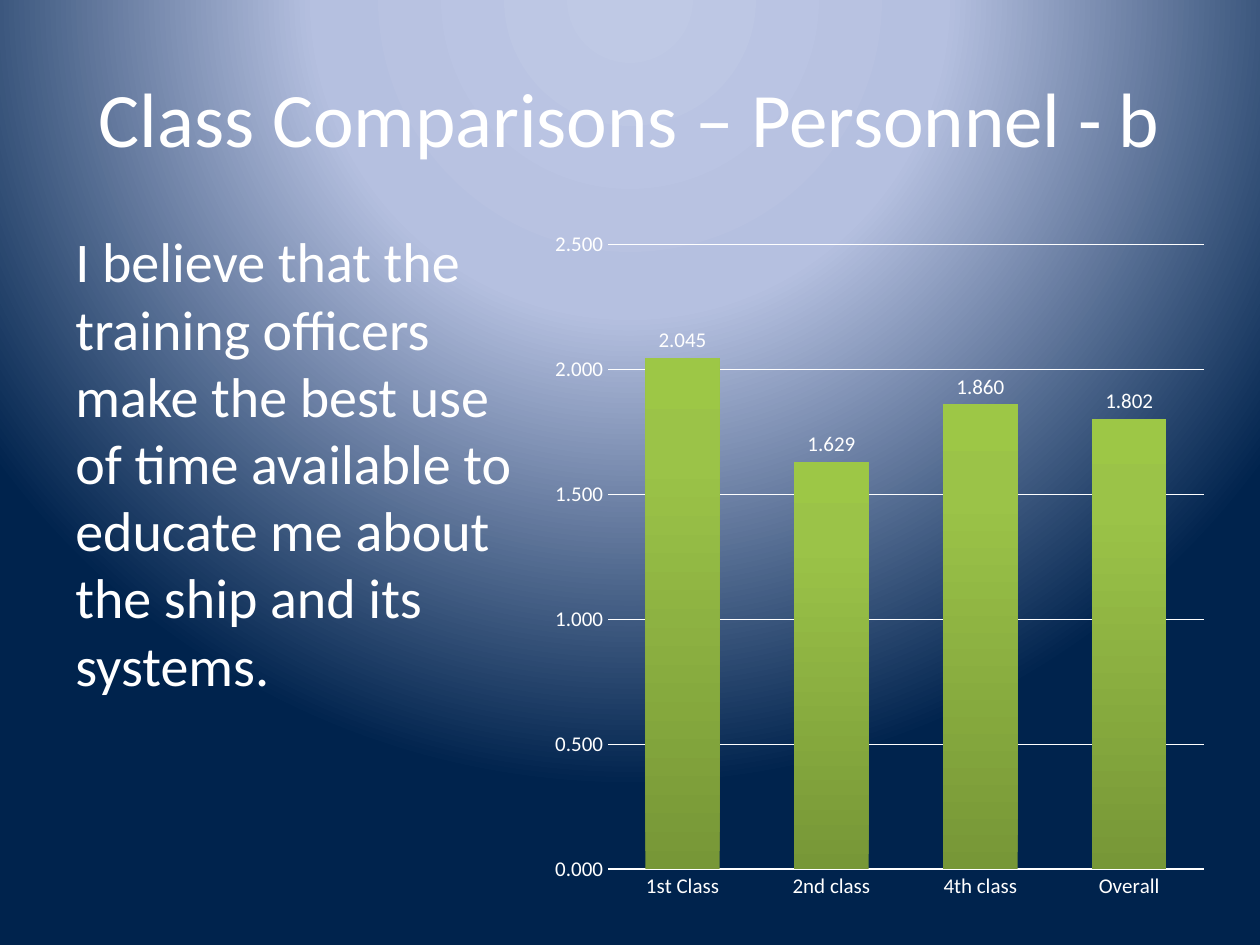
import pptx
import pptx.chart.data
import pptx.dml.color
import pptx.enum.chart
import pptx.enum.text
import pptx.oxml
import pptx.oxml.ns
import pptx.util
from pptx.util import Cm, Pt

COLORS = {
    "text": "FFFFFF",
    "glow": "BFC9E5",
    "haze": "B5C0E0",
    "navy": "00234D",
    "bar_dark": "779737",
    "bar_mid": "9BC348",
    "bar_light": "9DC746",
}
FONT = "Calibri"
WHITE = pptx.dml.color.RGBColor.from_string(COLORS["text"])


def set_gradient(parent, stops, direction):
    """Give the gradient fill below parent new stops and a new direction."""
    old = next(parent.iter(pptx.oxml.ns.qn("a:gradFill")))
    stop_list = "".join(
        f'<a:gs pos="{position * 1000}"><a:srgbClr val="{COLORS[name]}"/></a:gs>'
        for position, name in stops
    )
    new = pptx.oxml.parse_xml(
        f'<a:gradFill {pptx.oxml.ns.nsdecls("a")} rotWithShape="1">'
        f"<a:gsLst>{stop_list}</a:gsLst>{direction}</a:gradFill>"
    )
    old.getparent().replace(old, new)


def style_font(font, size):
    font.name = FONT
    font.size = Pt(size)
    font.color.rgb = WHITE


presentation = pptx.Presentation()
presentation.slide_width = Cm(25.4)
presentation.slide_height = Cm(19.05)
slide = presentation.slides.add_slide(presentation.slide_layouts[6])

# Background: glow centred above the top edge
slide.background.fill.gradient()
set_gradient(
    slide.background._cSld,
    [(0, "glow"), (40, "haze"), (100, "navy")],
    '<a:path path="circle">'
    '<a:fillToRect l="50000" t="-80000" r="50000" b="180000"/></a:path>',
)

# Title and statement
anchors = pptx.enum.text.MSO_ANCHOR
alignments = pptx.enum.text.PP_ALIGN
texts = [
    ("Class Comparisons – Personnel - b", 44, (1.27, 0.76, 22.86, 3.18),
     anchors.MIDDLE, alignments.CENTER),
    ("I believe that the training officers make the best use of time "
     "available to educate me about the ship and its systems.",
     32, (1.27, 4.45, 9.53, 12.57), anchors.TOP, alignments.LEFT),
]
for text, size, box, anchor, alignment in texts:
    shape = slide.shapes.add_textbox(*map(Cm, box))
    shape.text_frame.word_wrap = True
    shape.text_frame.vertical_anchor = anchor
    paragraph = shape.text_frame.paragraphs[0]
    paragraph.text = text
    paragraph.alignment = alignment
    style_font(paragraph.font, size)

# Column chart
chart_data = pptx.chart.data.CategoryChartData(number_format="0.000")
chart_data.categories = ["1st Class", "2nd class", "4th class", "Overall"]
chart_data.add_series("Series 1", (2.045, 1.629, 1.860, 1.802))
chart = slide.shapes.add_chart(
    pptx.enum.chart.XL_CHART_TYPE.COLUMN_CLUSTERED,
    Cm(10.36), Cm(4.45), Cm(14.61), Cm(13.97), chart_data,
).chart
chart.has_legend = False
chart.has_title = False
style_font(chart.font, 10)

# Axes
for axis in (chart.category_axis, chart.value_axis):
    axis.major_tick_mark = pptx.enum.chart.XL_TICK_MARK.NONE
    axis.minor_tick_mark = pptx.enum.chart.XL_TICK_MARK.NONE
    style_font(axis.tick_labels.font, 12)
category_line = chart.category_axis.format.line
category_line.color.rgb = WHITE
category_line.width = Pt(1)

value_axis = chart.value_axis
value_axis.minimum_scale = 0
value_axis.maximum_scale = 2.5
value_axis.major_unit = 0.5
value_axis.format.line.fill.background()
value_axis.tick_labels.number_format = "0.000"
value_axis.tick_labels.number_format_is_linked = False
grid_line = value_axis.major_gridlines.format.line
grid_line.color.rgb = WHITE
grid_line.width = Pt(0.75)

# Bars and their labels
plot = chart.plots[0]
plot.vary_by_categories = False
plot.gap_width = 100
plot.overlap = -24
series = plot.series[0]
series.format.fill.gradient()
set_gradient(
    series._element,
    [(0, "bar_dark"), (80, "bar_mid"), (100, "bar_light")],
    '<a:lin ang="16200000" scaled="0"/>',
)
labels = series.data_labels
labels.show_value = True
labels.position = pptx.enum.chart.XL_LABEL_POSITION.OUTSIDE_END
labels.number_format = "0.000"
labels.number_format_is_linked = False
style_font(labels.font, 12)

# Fixed inner plot area
plot_area = chart._chartSpace.chart.plotArea
for layout in plot_area.findall(pptx.oxml.ns.qn("c:layout")):
    plot_area.remove(layout)
edges = {"x": 0.13, "y": 0.034, "w": 0.822, "h": 0.902}
modes = "".join(f'<c:{edge}Mode val="edge"/>' for edge in "xy")
sizes = "".join(f'<c:{edge} val="{value}"/>' for edge, value in edges.items())
plot_area.insert(0, pptx.oxml.parse_xml(
    f'<c:layout {pptx.oxml.ns.nsdecls("c")}><c:manualLayout>'
    f'<c:layoutTarget val="inner"/>{modes}{sizes}</c:manualLayout></c:layout>'
))

presentation.save("out.pptx")
